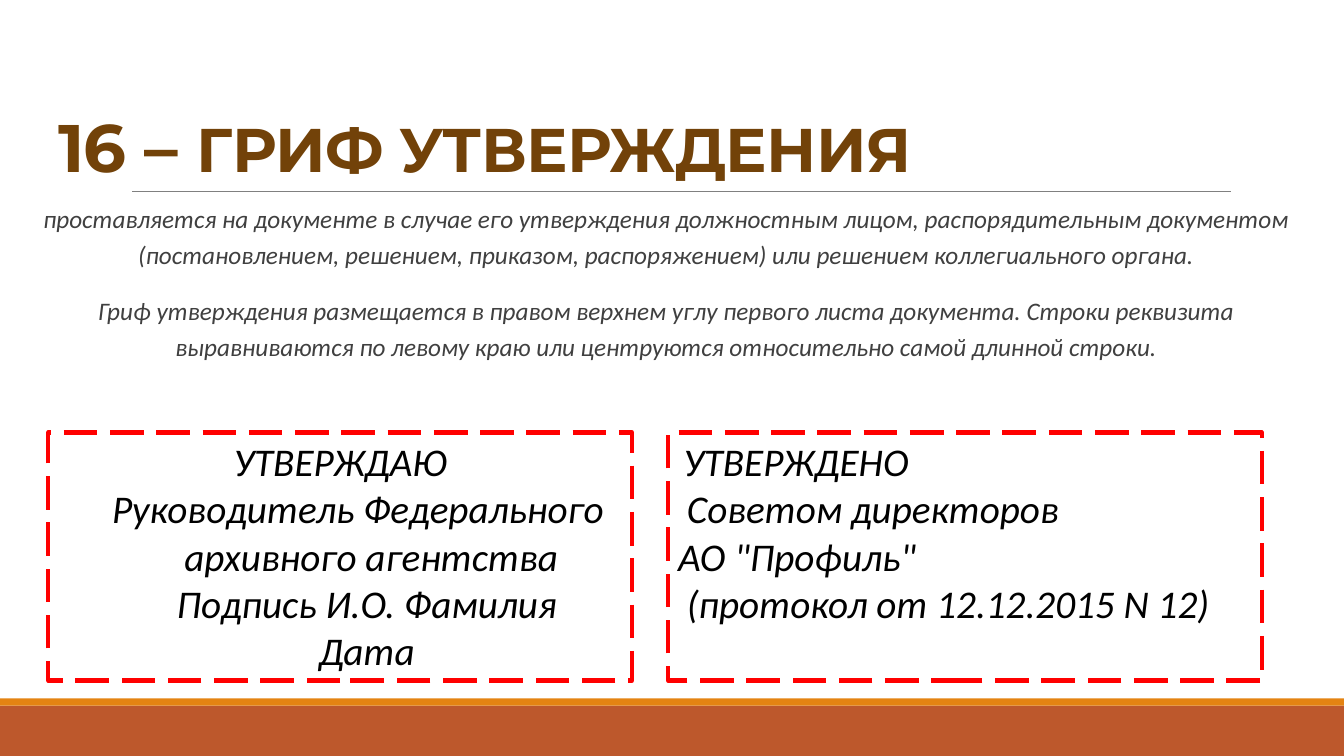
from dataclasses import dataclass
from typing import Optional

from lxml.etree import SubElement
from pptx import Presentation
from pptx.dml.color import RGBColor
from pptx.enum.dml import MSO_LINE
from pptx.enum.shapes import MSO_CONNECTOR, MSO_SHAPE
from pptx.enum.text import MSO_ANCHOR, MSO_AUTO_SIZE, PP_ALIGN
from pptx.oxml.ns import qn
from pptx.slide import Slide
from pptx.util import Cm, Pt

WHITE = RGBColor(0xFF, 0xFF, 0xFF)
BRICK = RGBColor(0xBD, 0x58, 0x2C)
ORANGE = RGBColor(0xE4, 0x83, 0x12)
GRAY = RGBColor(0x80, 0x80, 0x80)
CHARCOAL = RGBColor(0x40, 0x40, 0x40)
BROWN = RGBColor(0x72, 0x42, 0x09)
BLACK = RGBColor(0x00, 0x00, 0x00)
RED = RGBColor(0xFF, 0x00, 0x00)

SLIDE_WIDTH, SLIDE_HEIGHT = 33.87, 19.05
RULE_Y = 4.83
STAMP_TOP, STAMP_HEIGHT = 10.9, 6.25


@dataclass(frozen=True)
class Band:
    top: float
    height: float
    color: RGBColor


@dataclass(frozen=True)
class Style:
    font: str
    color: RGBColor
    bold: bool = False
    italic: bool = False
    tracking: Optional[int] = None


@dataclass(frozen=True)
class Piece:
    text: str
    size: float


@dataclass(frozen=True)
class Line:
    pieces: tuple[Piece, ...]
    indent: float = 0
    align: PP_ALIGN = PP_ALIGN.LEFT
    spacing: float = 1.0
    before: float = 0
    after: float = 0


@dataclass(frozen=True)
class Block:
    left: float
    top: float
    width: float
    height: float
    style: Style
    lines: tuple[Line, ...]
    side_inset: float = 0.25
    anchor: MSO_ANCHOR = MSO_ANCHOR.TOP
    framed: bool = False


TITLE_STYLE = Style("Montserrat", BROWN, bold=True, tracking=-50)
BODY_STYLE = Style("Calibri", CHARCOAL, italic=True)
STAMP_STYLE = Style("Calibri", BLACK, italic=True)

BANDS = (Band(17.78, 1.27, BRICK), Band(17.6, 0.18, ORANGE))

RULES_TEXT = (
    "проставляется на документе в случае его утверждения должностным лицом, "
    "распорядительным документом (постановлением, решением, приказом, "
    "распоряжением) или решением коллегиального органа.",
    "Гриф утверждения размещается в правом верхнем углу первого листа документа. "
    "Строки реквизита выравниваются по левому краю или центруются относительно "
    "самой длинной строки.",
)
OFFICIAL_STAMP = (
    ("УТВЕРЖДАЮ", 0),
    ("Руководитель Федерального", 0.89),
    ("архивного агентства", 1.56),
    ("Подпись И.О. Фамилия", 1.33),
    ("Дата", 1.33),
)
BOARD_STAMP = (
    ("УТВЕРЖДЕНО", 0.13),
    ("Советом директоров", 0.22),
    ("АО \"Профиль\"", 0),
    ("(протокол от 12.12.2015 N 12)", 0.22),
)


def stamp(left: float, width: float, entries: tuple[tuple[str, float], ...],
          align: PP_ALIGN) -> Block:
    lines = tuple(Line((Piece(text, 28),), indent, align) for text, indent in entries)
    return Block(left, STAMP_TOP, width, STAMP_HEIGHT, STAMP_STYLE, lines, framed=True)


BLOCKS = (
    Block(0.84, RULE_Y, 31.65, 5.28, BODY_STYLE,
          tuple(Line((Piece(text, 18),), 0.25, PP_ALIGN.CENTER, 1.2, 12, 2)
                for text in RULES_TEXT),
          side_inset=0),
    Block(1.22, 0.79, 31.24, 4.04, TITLE_STYLE,
          (Line((Piece("16 – ", 48), Piece("ГРИФ УТВЕРЖДЕНИЯ", 44)), spacing=0.85),),
          anchor=MSO_ANCHOR.BOTTOM),
    stamp(1.22, 14.71, OFFICIAL_STAMP, PP_ALIGN.CENTER),
    stamp(16.84, 14.96, BOARD_STAMP, PP_ALIGN.LEFT),
)


def draw_band(slide: Slide, band: Band) -> None:
    strip = slide.shapes.add_shape(MSO_SHAPE.RECTANGLE, 0, Cm(band.top),
                                   Cm(SLIDE_WIDTH), Cm(band.height))
    strip.shadow.inherit = False
    strip.fill.solid()
    strip.fill.fore_color.rgb = band.color
    strip.line.fill.background()


def draw_title_rule(slide: Slide) -> None:
    rule = slide.shapes.add_connector(MSO_CONNECTOR.STRAIGHT, Cm(3.33), Cm(RULE_Y),
                                      Cm(31.01), Cm(RULE_Y))
    rule.line.color.rgb = GRAY
    rule.line.width = Pt(0.5)
    SubElement(rule._element.spPr, qn("a:effectLst"))


def write_line(paragraph, line: Line, style: Style) -> None:
    paragraph.alignment = line.align
    paragraph.line_spacing = line.spacing
    paragraph.space_before = Pt(line.before)
    paragraph.space_after = Pt(line.after)
    if line.indent:
        properties = paragraph._p.get_or_add_pPr()
        properties.set("marL", str(Cm(line.indent)))
        properties.set("indent", "0")
    for piece in line.pieces:
        run = paragraph.add_run()
        run.text = piece.text
        run.font.size = Pt(piece.size)
        run.font.name = style.font
        run.font.color.rgb = style.color
        run.font.bold = style.bold
        run.font.italic = style.italic
        if style.tracking is not None:
            run._r.get_or_add_rPr().set("spc", str(style.tracking))


def draw_block(slide: Slide, block: Block) -> None:
    box = slide.shapes.add_textbox(Cm(block.left), Cm(block.top),
                                   Cm(block.width), Cm(block.height))
    frame = box.text_frame
    frame.word_wrap = True
    frame.auto_size = MSO_AUTO_SIZE.NONE
    frame.vertical_anchor = block.anchor
    frame.margin_left = frame.margin_right = Cm(block.side_inset)
    frame.margin_top = frame.margin_bottom = Cm(0.13)
    if block.framed:
        frame.auto_size = MSO_AUTO_SIZE.SHAPE_TO_FIT_TEXT
        box.line.color.rgb = RED
        box.line.width = Pt(3)
        box.line.dash_style = MSO_LINE.LONG_DASH
    for index, line in enumerate(block.lines):
        paragraph = frame.add_paragraph() if index else frame.paragraphs[0]
        write_line(paragraph, line, block.style)


def main() -> None:
    deck = Presentation()
    deck.slide_width = Cm(SLIDE_WIDTH)
    deck.slide_height = Cm(SLIDE_HEIGHT)
    slide = deck.slides.add_slide(deck.slide_layouts[6])
    slide.background.fill.solid()
    slide.background.fill.fore_color.rgb = WHITE
    for band in BANDS:
        draw_band(slide, band)
    draw_title_rule(slide)
    for block in BLOCKS:
        draw_block(slide, block)
    deck.save("out.pptx")


if __name__ == "__main__":
    main()
